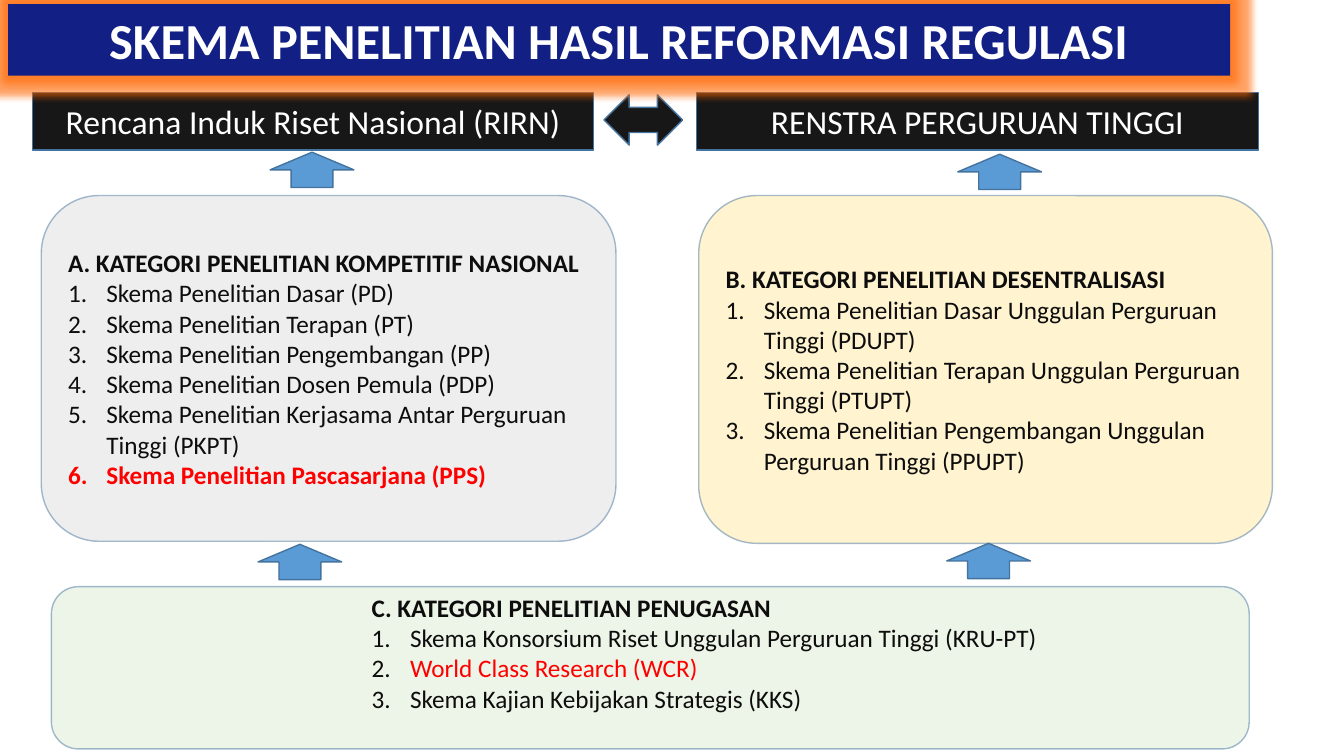
from dataclasses import dataclass

from lxml import etree
from pptx import Presentation
from pptx.dml.color import RGBColor
from pptx.enum.shapes import MSO_SHAPE
from pptx.enum.text import MSO_ANCHOR, MSO_AUTO_SIZE, PP_ALIGN
from pptx.oxml.ns import qn
from pptx.shapes.autoshape import Shape
from pptx.slide import Slide
from pptx.text.text import _Paragraph
from pptx.util import Inches, Pt

RECTANGLE = MSO_SHAPE.RECTANGLE
ROUNDED = MSO_SHAPE.ROUNDED_RECTANGLE
UP_ARROW = MSO_SHAPE.UP_ARROW
DOUBLE_ARROW = MSO_SHAPE.LEFT_RIGHT_ARROW
TOP, MIDDLE = MSO_ANCHOR.TOP, MSO_ANCHOR.MIDDLE
LEFT, CENTER = PP_ALIGN.LEFT, PP_ALIGN.CENTER
GROW = MSO_AUTO_SIZE.SHAPE_TO_FIT_TEXT

FONT = "Calibri"
INK, RED, WHITE = "0D0D0D", "FF0000", "FFFFFF"
BLACK, BLUE, NAVY = "181717", "5B9BD5", "122086"
SHAPE_LINE, PANEL_LINE, GLOW = "43739E", "41719C", "FF6600"
HANGING = 0.38


@dataclass
class Box:
    left: float
    top: float
    width: float
    height: float


@dataclass
class Item:
    text: str
    color: str = INK
    bold: bool = False
    number_color: str = INK


@dataclass
class Panel:
    box: Box
    fill: str
    heading: str
    items: list[Item]
    indent: float = 0
    bottom_margin: float = 0.05


PANELS = [
    Panel(Box(0.51, 5.82, 11.88, 1.61), "C5E0B4", "C. KATEGORI PENELITIAN PENUGASAN", [
        Item("Skema Konsorsium Riset Unggulan Perguruan Tinggi (KRU-PT)"),
        Item("World Class Research (WCR)", RED),
        Item("Skema Kajian Kebijakan Strategis (KKS)"),
    ], indent=3, bottom_margin=0.35),
    Panel(Box(6.93, 1.94, 5.69, 3.45), "FFD966", "B. KATEGORI PENELITIAN DESENTRALISASI", [
        Item("Skema Penelitian Dasar Unggulan Perguruan Tinggi (PDUPT)"),
        Item("Skema Penelitian Terapan Unggulan Perguruan Tinggi (PTUPT)"),
        Item("Skema Penelitian Pengembangan Unggulan Perguruan Tinggi (PPUPT)"),
    ]),
    Panel(Box(0.41, 1.94, 5.7, 3.43), "C9C9C9", "A. KATEGORI PENELITIAN KOMPETITIF NASIONAL", [
        Item("Skema Penelitian Dasar (PD)"),
        Item("Skema Penelitian Terapan (PT)"),
        Item("Skema Penelitian Pengembangan (PP)"),
        Item("Skema Penelitian Dosen Pemula (PDP)"),
        Item("Skema Penelitian Kerjasama Antar Perguruan Tinggi (PKPT)"),
        Item("Skema Penelitian Pascasarjana (PPS)", RED, True, RED),
    ]),
]
HEADERS = [
    (Box(0.32, 0.92, 5.57, 0.57), "Rencana Induk Riset Nasional (RIRN)"),
    (Box(6.91, 0.92, 5.57, 0.57), "RENSTRA PERGURUAN TINGGI"),
]
UP_ARROWS = [(2.68, 1.51), (9.5, 1.53), (2.56, 5.4), (9.39, 5.39)]


def rgb(color: str) -> RGBColor:
    return RGBColor.from_string(color)


def add_filled(slide: Slide, kind: MSO_SHAPE, box: Box, fill: str, line: str = "") -> Shape:
    shape = slide.shapes.add_shape(
        kind, Inches(box.left), Inches(box.top), Inches(box.width), Inches(box.height))
    shape.shadow.inherit = False
    shape.fill.solid()
    shape.fill.fore_color.rgb = rgb(fill)
    if line:
        shape.line.color.rgb = rgb(line)
        shape.line.width = Pt(1)
    else:
        shape.line.fill.background()
    return shape


def set_opacity(color_element: etree._Element, percent: int) -> None:
    etree.SubElement(color_element, qn("a:alpha")).set("val", str(percent * 1000))


def add_text(paragraph: _Paragraph, text: str, size: int, color: str,
             bold: bool = False, align: PP_ALIGN = LEFT) -> None:
    paragraph.alignment = align
    run = paragraph.add_run()
    run.text = text
    run.font.name = FONT
    run.font.size = Pt(size)
    run.font.bold = bold
    run.font.color.rgb = rgb(color)


def set_indent(paragraph: _Paragraph, left: float, first: float = 0) -> etree._Element:
    properties = paragraph._p.get_or_add_pPr()
    properties.set("marL", str(Inches(left)))
    properties.set("indent", str(Inches(first)))
    return properties


def add_numbered(paragraph: _Paragraph, item: Item, indent: float) -> None:
    properties = set_indent(paragraph, indent + HANGING, -HANGING)
    number_color = etree.SubElement(properties, qn("a:buClr"))
    etree.SubElement(number_color, qn("a:srgbClr")).set("val", item.number_color)
    etree.SubElement(properties, qn("a:buAutoNum")).set("type", "arabicPeriod")
    add_text(paragraph, item.text, 18, item.color, item.bold)


def add_panel(slide: Slide, panel: Panel) -> None:
    shape = add_filled(slide, ROUNDED, panel.box, panel.fill, PANEL_LINE)
    fill_color, line_color = shape._element.spPr.findall(".//" + qn("a:srgbClr"))
    set_opacity(fill_color, 30)
    set_opacity(line_color, 47)
    frame = shape.text_frame
    frame.word_wrap = True
    frame.vertical_anchor = MIDDLE
    frame.margin_bottom = Inches(panel.bottom_margin)
    heading = frame.paragraphs[0]
    set_indent(heading, panel.indent)
    add_text(heading, panel.heading, 18, INK, True)
    for item in panel.items:
        add_numbered(frame.add_paragraph(), item, panel.indent)


def add_header(slide: Slide, box: Box, text: str) -> None:
    shape = add_filled(slide, RECTANGLE, box, BLACK, SHAPE_LINE)
    shape.text_frame.word_wrap = True
    shape.text_frame.vertical_anchor = MIDDLE
    add_text(shape.text_frame.paragraphs[0], text, 24, WHITE, align=CENTER)


def add_title(slide: Slide) -> None:
    shape = add_filled(slide, RECTANGLE, Box(0.08, 0.04, 12.12, 0.71), NAVY)
    effects = shape._element.spPr.find(qn("a:effectLst"))
    glow = etree.SubElement(effects, qn("a:glow"))
    glow.set("rad", str(Pt(10)))
    glow_color = etree.SubElement(glow, qn("a:srgbClr"))
    glow_color.set("val", GLOW)
    set_opacity(glow_color, 60)
    frame = shape.text_frame
    frame.word_wrap = True
    frame.auto_size = GROW
    frame.vertical_anchor = TOP
    add_text(frame.paragraphs[0], "SKEMA PENELITIAN HASIL REFORMASI REGULASI",
             36, WHITE, True, CENTER)


def main() -> None:
    presentation = Presentation()
    presentation.slide_width = Inches(13.33)
    presentation.slide_height = Inches(7.5)
    slide = presentation.slides.add_slide(presentation.slide_layouts[6])
    for panel in PANELS:
        add_panel(slide, panel)
    for box, text in HEADERS:
        add_header(slide, box, text)
    add_filled(slide, DOUBLE_ARROW, Box(5.99, 0.94, 0.78, 0.5), BLACK, SHAPE_LINE)
    for left, top in UP_ARROWS:
        add_filled(slide, UP_ARROW, Box(left, top, 0.83, 0.35), BLUE, SHAPE_LINE)
    add_title(slide)
    presentation.save("out.pptx")


if __name__ == "__main__":
    main()
